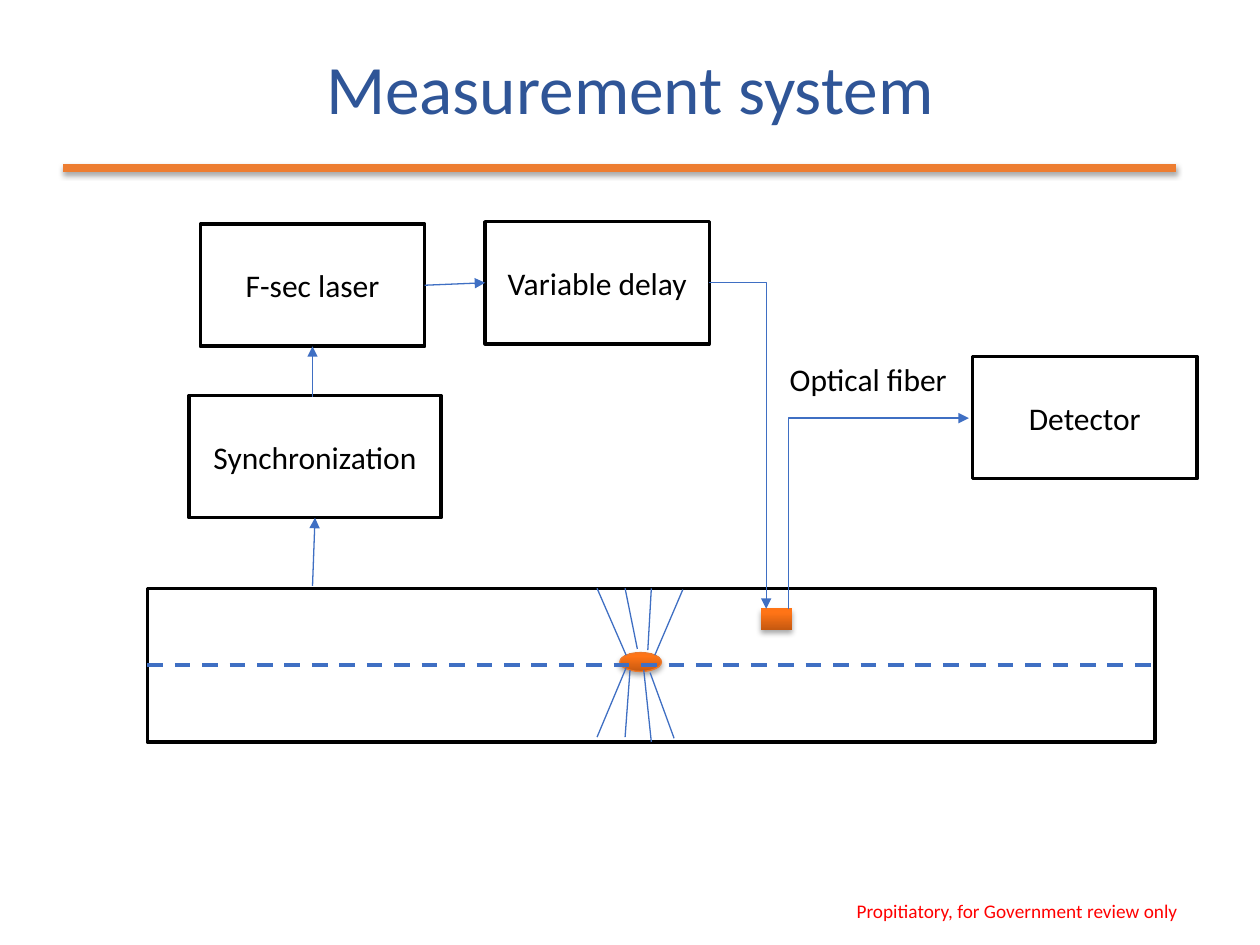
import copy

import pptx
import pptx.util
import pptx.dml.color
import pptx.enum.dml
import pptx.enum.shapes
import pptx.enum.text
import pptx.oxml.ns
import lxml.etree

Pt = pptx.util.Pt
RGB = pptx.dml.color.RGBColor
KIND = pptx.enum.shapes.MSO_SHAPE
LINK = pptx.enum.shapes.MSO_CONNECTOR
ALIGN = pptx.enum.text.PP_ALIGN
FIT = pptx.enum.text.MSO_AUTO_SIZE
MIDDLE = pptx.enum.text.MSO_ANCHOR.MIDDLE
qn = pptx.oxml.ns.qn

BLACK = RGB(0x00, 0x00, 0x00)
WHITE = RGB(0xFF, 0xFF, 0xFF)
RED = RGB(0xFF, 0x00, 0x00)
NAVY = RGB(0x2F, 0x55, 0x97)
BLUE = RGB(0x3F, 0x6F, 0xC3)
ORANGE = RGB(0xED, 0x7D, 0x31)
RIM = RGB(0xEC, 0x79, 0x2B)
BLEND = [(0, RGB(0xC6, 0x59, 0x10)), (0.8, RGB(0xFF, 0x74, 0x16)),
         (1, RGB(0xFF, 0x75, 0x17))]
TOP, LEFT, BOTTOM, RIGHT = range(4)


def write(frame, text, size=18, color=BLACK, align=ALIGN.CENTER, anchor=MIDDLE):
    """Put one formatted line of text in a frame."""
    frame.text = text
    frame.vertical_anchor = anchor
    par = frame.paragraphs[0]
    par.alignment = align
    font = par.runs[0].font
    font.name, font.size, font.color.rgb = "Calibri", Pt(size), color


def label(slide, box, text, **format):
    """Add a text box that fits its single line."""
    frame = slide.shapes.add_textbox(*map(Pt, box)).text_frame
    frame.word_wrap = False
    frame.auto_size = FIT.SHAPE_TO_FIT_TEXT
    write(frame, text, align=ALIGN.LEFT, anchor=pptx.enum.text.MSO_ANCHOR.TOP, **format)


def shade(props):
    """Add a soft shadow below a shape, given its properties."""
    effects = props.find(qn("a:effectLst"))
    shadow = lxml.etree.SubElement(effects, qn("a:outerShdw"), blurRad="40000",
                                   dist="23000", dir="5400000", rotWithShape="0")
    tint = lxml.etree.SubElement(shadow, qn("a:srgbClr"), val="000000")
    lxml.etree.SubElement(tint, qn("a:alpha"), val="35000")


def block(slide, box, text=""):
    """Add a white box with a black outline and a centred caption."""
    shape = slide.shapes.add_shape(KIND.RECTANGLE, *map(Pt, box))
    shape.shadow.inherit = False
    shape.fill.solid()
    shape.fill.fore_color.rgb = WHITE
    shape.line.color.rgb = BLACK
    shape.line.width = Pt(2)
    if text:
        write(shape.text_frame, text)
    return shape


def spot(slide, kind, box, rim=None):
    """Add an orange shape with a gradient and a shadow."""
    shape = slide.shapes.add_shape(kind, *map(Pt, box))
    shape.shadow.inherit = False
    shape.fill.gradient()
    shape.fill.gradient_angle = 90
    props = shape._element.spPr
    stops = props.find(".//" + qn("a:gsLst"))
    stops.append(copy.deepcopy(stops[0]))
    for stop, (place, color) in zip(shape.fill.gradient_stops, BLEND):
        stop.position, stop.color.rgb = place, color
    if rim:
        shape.line.color.rgb = rim
        shape.line.width = Pt(0.75)
    else:
        shape.line.fill.background()
    shade(props)


def wire(slide, start, end, color=BLUE, width=0.75, arrow=False, kind=LINK.STRAIGHT):
    """Add a connector between two points."""
    line = slide.shapes.add_connector(kind, *map(Pt, (*start, *end)))
    line.line.color.rgb = color
    line.line.width = Pt(width)
    props = line._element.spPr
    if arrow:
        lxml.etree.SubElement(props.find(qn("a:ln")), qn("a:tailEnd"), type="triangle")
    lxml.etree.SubElement(props, qn("a:effectLst"))
    return line


def elbow(slide, start, end, upright=False):
    """Add a one-bend arrow that leaves sideways, or upright to the right."""
    if upright:
        mid_x, mid_y = (start[0] + end[0]) / 2, (start[1] + end[1]) / 2
        half_w, half_h = (start[1] - end[1]) / 2, (end[0] - start[0]) / 2
        start, end = (mid_x + half_w, mid_y + half_h), (mid_x - half_w, mid_y - half_h)
    line = wire(slide, start, end, arrow=True, kind=LINK.ELBOW)
    props = line._element.spPr
    props.find(qn("a:prstGeom")).set("prst", "bentConnector2")
    if upright:
        props.find(qn("a:xfrm")).set("rot", "5400000")


def head(slide, left, top, width, height):
    """Place the title and the rule below it."""
    title = slide.shapes.title
    title.left, title.top, title.width, title.height = map(Pt, (left, top, width, height))
    write(title.text_frame, "Measurement system", size=39.6, color=NAVY)
    title.text_frame.auto_size = FIT.NONE
    level = top + height + 18
    rule = wire(slide, (left, level), (left + width - 12, level), color=ORANGE, width=4.5)
    shade(rule._element.spPr)


def tube(slide, left, top, width, height):
    """Draw the beam tube with its target, bunch, rays and axis."""
    pipe = block(slide, (left, top, width, height))
    spot(slide, KIND.RECTANGLE, (left + 350.6, top + 11.5, 18, 12.2))
    spot(slide, KIND.OVAL, (left + 270, top + 36.7, 23.8, 10.8), rim=RIM)
    rays = [(290, 38.2, 306, 0.7), (286, 35.3, 288, 0), (280, 34.6, 273, 0),
            (273.6, 38.2, 257, 0), (257, 85, 273.6, 45.4), (273, 85, 275.8, 46.8),
            (288, 87.8, 283.7, 46.8), (301, 85.7, 287.3, 48.2)]
    for x1, y1, x2, y2 in rays:
        wire(slide, (left + x1, top + y1), (left + x2, top + y2))
    middle = top + height / 2
    axis = wire(slide, (left, middle), (left + width, middle), width=2.25)
    axis.line.dash_style = pptx.enum.dml.MSO_LINE.DASH
    axis.begin_connect(pipe, LEFT)
    axis.end_connect(pipe, RIGHT)


def flow(slide, left, top, width, height):
    """Draw the laser chain and the detector with their links."""
    wide, tall = 128.2, 69.8

    def at(x, y):
        """Shift a point into the region."""
        return left + x, top + y

    laser = block(slide, (*at(6.5, 1.4), wide, tall), "F-sec laser")
    delay = block(slide, (*at(169.2, 0), wide, tall), "Variable delay")
    sync = block(slide, (*at(0, 99.4), 144, tall), "Synchronization")
    block(slide, (*at(width - wide, 77.1), wide, tall), "Detector")
    label(slide, (*at(336.2, 75.6), 105.8, 28.8), "Optical fiber")

    feed = wire(slide, at(70.6, 208.1), at(72, 169.2), arrow=True)
    feed.end_connect(sync, BOTTOM)
    rise = wire(slide, at(70.6, 100.1), at(70.6, 71.2), arrow=True)
    rise.end_connect(laser, BOTTOM)
    link = wire(slide, at(134.7, 36.3), at(169.2, 34.9), arrow=True)
    link.begin_connect(laser, RIGHT)
    link.end_connect(delay, LEFT)
    elbow(slide, at(169.2 + wide, tall / 2), at(329.8, height))
    elbow(slide, at(342.7, height), at(445.7, 112.3), upright=True)


def main():
    """Build the slide and save it."""
    deck = pptx.Presentation()
    deck.slide_width, deck.slide_height = Pt(720), Pt(540)
    slide = deck.slides.add_slide(deck.slide_layouts[5])
    head(slide, 36, 21.6, 648, 56.2)
    tube(slide, 84.2, 336.2, 576, 87.8)
    flow(slide, 108, 126.7, 576, 221.1)
    label(slide, (482.4, 510.5, 200.9, 20.9), "Propitiatory, for Government review only",
          size=11, color=RED)
    deck.save("out.pptx")


if __name__ == "__main__":
    main()
